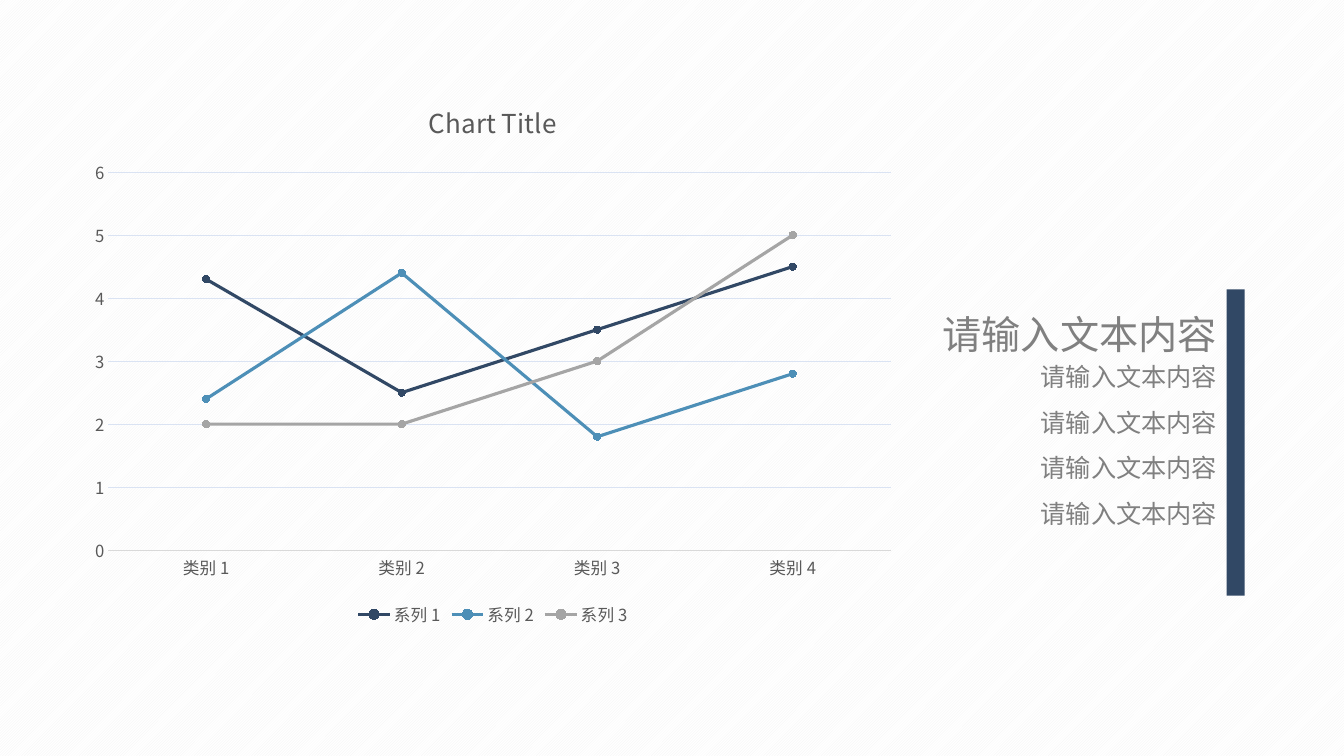
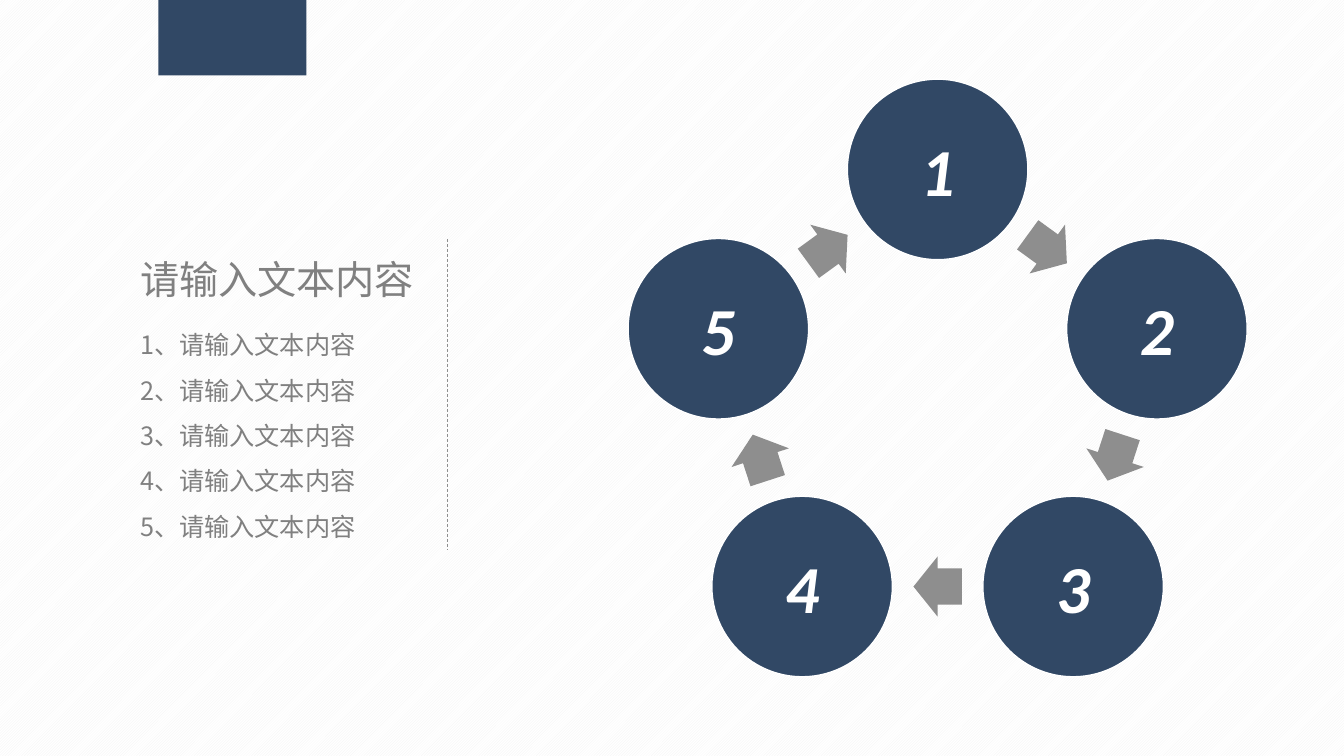
from math import cos, radians, sin

from pptx import Presentation
from pptx.chart.data import CategoryChartData
from pptx.dml.color import RGBColor
from pptx.enum.chart import (XL_CHART_TYPE, XL_LEGEND_POSITION,
                             XL_MARKER_STYLE, XL_TICK_MARK)
from pptx.enum.dml import MSO_LINE, MSO_PATTERN
from pptx.enum.shapes import MSO_CONNECTOR, MSO_SHAPE
from pptx.enum.text import MSO_ANCHOR, MSO_AUTO_SIZE, PP_ALIGN
from pptx.oxml.ns import qn
from pptx.oxml.xmlchemy import OxmlElement
from pptx.util import Cm, Pt

NAVY = RGBColor(0x31, 0x48, 0x65)
BLUE = RGBColor(0x4D, 0x8F, 0xB7)
SILVER = RGBColor(0xA5, 0xA5, 0xA5)
GRAY = RGBColor(0x80, 0x80, 0x80)
STEEL = RGBColor(0x8E, 0x8E, 0x8E)
DARK = RGBColor(0x59, 0x59, 0x59)
GRID = RGBColor(0xDA, 0xE3, 0xF3)
AXIS = RGBColor(0xD9, 0xD9, 0xD9)
STRIPE = RGBColor(0xF2, 0xF2, 0xF2)
WHITE = RGBColor(0xFF, 0xFF, 0xFF)

SANS = "Noto Sans CJK SC"
HEAD = {"size": Pt(28), "name": SANS}
BODY = {"size": Pt(18), "name": SANS}
DIGIT = {"size": Pt(48), "name": "Calibri", "bold": True, "italic": True}
LABEL = {"size": Pt(11.9), "name": SANS}
PROMPT = "请输入文本内容"


def put(item, values):
    for key, value in values.items():
        setattr(item, key, value)


def style(font, values, color):
    put(font, values)
    font.color.rgb = color


def stroke(line, color, width):
    line.color.rgb = color
    line.width = Pt(width)


def widen(root):
    """Use each Latin typeface for East Asian text as well."""
    for latin in list(root.iter(qn("a:latin"))):
        east = OxmlElement("a:ea")
        east.set("typeface", latin.get("typeface"))
        latin.addnext(east)


class Deck:
    def __init__(self):
        self.prs = Presentation()
        put(self.prs, {"slide_width": Cm(33.87), "slide_height": Cm(19.05)})
        # Striped background shared by all slides
        fill = self.prs.slide_master.background.fill
        fill.patterned()
        fill.pattern = MSO_PATTERN.DARK_UPWARD_DIAGONAL
        fill.fore_color.rgb = STRIPE
        fill.back_color.rgb = WHITE

    def page(self):
        self.slide = self.prs.slides.add_slide(self.prs.slide_layouts[6])

    def shape(self, kind, x, y, w, h, color):
        item = self.slide.shapes.add_shape(kind, Cm(x), Cm(y), Cm(w), Cm(h))
        item.shadow.inherit = False
        item.fill.solid()
        item.fill.fore_color.rgb = color
        item.line.fill.background()
        return item

    def text(self, x, y, w, h, rows, form, space, align=PP_ALIGN.LEFT, wrap=True):
        box = self.slide.shapes.add_textbox(Cm(x), Cm(y), Cm(w), Cm(h))
        frame = box.text_frame
        put(frame, {"word_wrap": wrap, "auto_size": MSO_AUTO_SIZE.SHAPE_TO_FIT_TEXT})
        frame.text = "\n".join(rows)
        for para in frame.paragraphs:
            put(para, {"alignment": align, "line_spacing": space})
            style(para.runs[0].font, form, GRAY)
        widen(box.element)

    def title(self, x, y, h, align=PP_ALIGN.LEFT):
        self.text(x, y, 7.49, h, [PROMPT], HEAD, 3.0, align, False)

    def body(self, x, y, h, rows, align=PP_ALIGN.LEFT):
        self.text(x, y, 8.59, h, rows, BODY, 1.5, align)

    def disc(self, x, y, size, label):
        item = self.shape(MSO_SHAPE.OVAL, x - size / 2, y - size / 2,
                          size, size, NAVY)
        stroke(item.line, WHITE, 1)
        frame = item.text_frame
        put(frame, {"text": label, "vertical_anchor": MSO_ANCHOR.MIDDLE})
        para = frame.paragraphs[0]
        para.alignment = PP_ALIGN.CENTER
        style(para.runs[0].font, DIGIT, WHITE)

    def arrow(self, x, y, w, h, angle):
        item = self.shape(MSO_SHAPE.RIGHT_ARROW, x - w / 2, y - h / 2, w, h, STEEL)
        item.adjustments[0] = 0.6
        item.rotation = angle

    def rule(self, x, top, end):
        line = self.slide.shapes.add_connector(
            MSO_CONNECTOR.STRAIGHT, Cm(x), Cm(top), Cm(x), Cm(end))
        stroke(line.line, STEEL, 0.5)
        line.line.dash_style = MSO_LINE.DASH
        line.element.spPr.append(OxmlElement("a:effectLst"))

    def chart(self, x, y, w, h, title, names, series):
        data = CategoryChartData()
        data.categories = names
        for name, values, _ in series:
            data.add_series(name, values)
        chart = self.slide.shapes.add_chart(
            XL_CHART_TYPE.LINE_MARKERS, Cm(x), Cm(y), Cm(w), Cm(h), data).chart
        style(chart.font, LABEL, DARK)

        # Title and legend
        frame = chart.chart_title.text_frame
        frame.text = title
        style(frame.paragraphs[0].runs[0].font,
              {"size": Pt(18.6), "name": SANS, "bold": False}, DARK)
        chart.has_legend = True
        put(chart.legend, {"position": XL_LEGEND_POSITION.BOTTOM,
                           "include_in_layout": False})
        style(chart.legend.font, LABEL, DARK)

        # Axes
        for axis in (chart.category_axis, chart.value_axis):
            put(axis, {"major_tick_mark": XL_TICK_MARK.NONE,
                       "minor_tick_mark": XL_TICK_MARK.NONE})
            style(axis.tick_labels.font, LABEL, DARK)
        stroke(chart.category_axis.format.line, AXIS, 0.75)
        scale = chart.value_axis
        put(scale, {"minimum_scale": 0, "maximum_scale": 6, "major_unit": 1})
        scale.format.line.fill.background()
        stroke(scale.major_gridlines.format.line, GRID, 0.75)

        # Series
        plot = chart.plots[0]
        plot.vary_by_categories = False
        for item, (_, _, color) in zip(plot.series, series):
            item.smooth = False
            stroke(item.format.line, color, 2.25)
            put(item.marker, {"style": XL_MARKER_STYLE.CIRCLE, "size": 5})
            look = item.marker.format
            look.fill.solid()
            look.fill.fore_color.rgb = color
            stroke(look.line, color, 0.75)
        widen(chart.element)

    def cycle(self, x, y, reach, count):
        step = 360 / count
        spots = []
        for i in range(count):
            turn = radians(i * step)
            spots.append((x + reach * sin(turn), y - reach * cos(turn)))
        for i, (left, top) in enumerate(spots):
            right, low = spots[(i + 1) % count]
            self.disc(left, top, 4.55, str(i + 1))
            self.arrow((left + right) / 2, (top + low) / 2, 1.22, 1.52,
                       (i + 0.5) * step)


def main():
    deck = Deck()

    # Line chart with text on the right
    deck.page()
    deck.chart(1.98, 1.98, 20.88, 13.92, "Chart Title",
               [f"类别 {i}" for i in range(1, 5)],
               [("系列 1", (4.3, 2.5, 3.5, 4.5), NAVY),
                ("系列 2", (2.4, 4.4, 1.8, 2.8), BLUE),
                ("系列 3", (2, 2, 3, 5), SILVER)])
    deck.shape(MSO_SHAPE.RECTANGLE, 30.91, 7.29, 0.46, 7.72, NAVY)
    deck.body(22.33, 8.61, 4.88, [PROMPT] * 4, PP_ALIGN.RIGHT)
    deck.title(23.42, 5.33, 3.84, PP_ALIGN.RIGHT)

    # Five-step cycle with a numbered list
    deck.page()
    deck.cycle(23.63, 10.08, 5.81, 5)
    deck.body(3.28, 7.8, 6.02, [f"{i}、{PROMPT}" for i in range(1, 6)])
    deck.title(3.28, 3.94, 3.18)
    deck.rule(11.28, 6.02, 13.84)
    deck.shape(MSO_SHAPE.RECTANGLE, 3.99, 0, 3.73, 1.9, NAVY)

    deck.prs.save("out.pptx")


if __name__ == "__main__":
    main()
